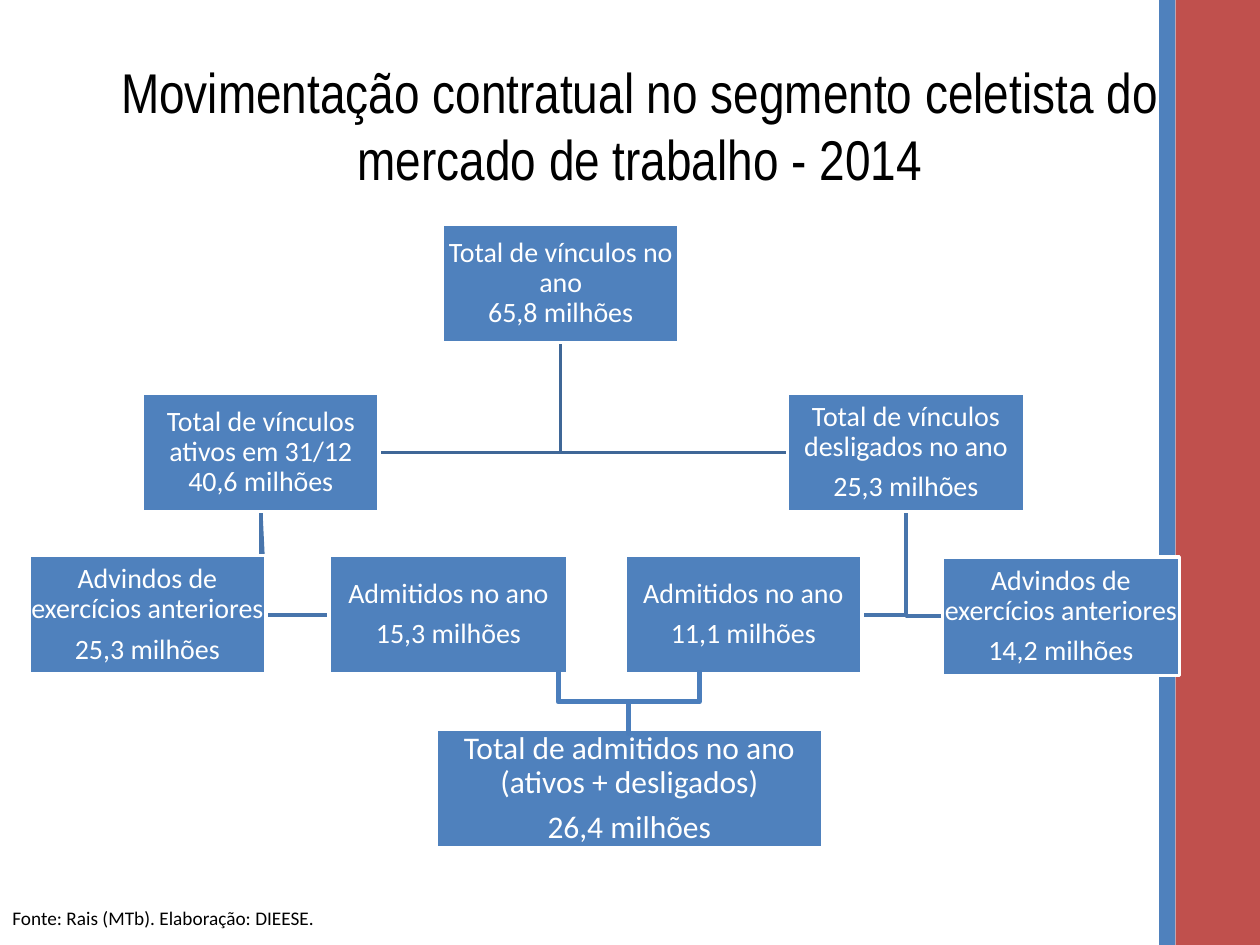
from pptx import Presentation
from pptx.dml.color import RGBColor
from pptx.enum.shapes import MSO_SHAPE as Shape
from pptx.enum.text import MSO_ANCHOR as Anchor, MSO_AUTO_SIZE as AutoSize, PP_ALIGN as Align
from pptx.util import Inches, Pt

BLUE = RGBColor(0x4F, 0x81, 0xBD)
RED = RGBColor(0xC0, 0x50, 0x4D)
WHITE = RGBColor(0xFF, 0xFF, 0xFF)
BLACK = RGBColor(0x00, 0x00, 0x00)
UPPER_LINE = RGBColor(0x3F, 0x67, 0x97)
LOWER_LINE = RGBColor(0x48, 0x75, 0xAC)
BRACE_LINE = RGBColor(0x4B, 0x7E, 0xBC)

BOX_WIDTH, BOX_HEIGHT = 1.88, 0.94

# Left, top, width, text size, paragraphs (a newline is a line break)
BOXES = [
    (3.51, 1.78, BOX_WIDTH, 16, ["Total de vínculos no ano\n65,8 milhões"]),
    (1.13, 3.12, BOX_WIDTH, 16, ["Total de vínculos ativos em 31/12\n40,6 milhões"]),
    (2.61, 4.41, 1.9, 16, ["Admitidos no ano", "15,3 milhões"]),
    (0.23, 4.41, BOX_WIDTH, 16, ["Advindos de exercícios anteriores", "25,3 milhões"]),
    (6.25, 3.12, BOX_WIDTH, 16, ["Total de vínculos desligados no ano", "25,3 milhões"]),
    (4.96, 4.41, BOX_WIDTH, 16, ["Admitidos no ano", "11,1 milhões"]),
    (7.48, 4.42, BOX_WIDTH, 16, ["Advindos de exercícios anteriores", "14,2 milhões"]),
    (3.46, 5.79, 3.07, 18, ["Total de admitidos no ano (ativos + desligados)", "26,4 milhões"]),
]

# Colour and corner points of each branch
BRANCHES = [
    (LOWER_LINE, [(7.19, 4.06), (7.19, 4.89), (7.48, 4.89)]),
    (LOWER_LINE, [(7.19, 4.06), (7.19, 4.88), (6.84, 4.88)]),
    (UPPER_LINE, [(4.45, 2.72), (4.45, 3.59), (6.25, 3.59)]),
    (LOWER_LINE, [(2.07, 4.06), (2.11, 4.88)]),
    (LOWER_LINE, [(2.07, 4.06), (2.07, 4.88), (2.61, 4.88)]),
    (UPPER_LINE, [(4.45, 2.72), (4.45, 3.59), (3.01, 3.59)]),
]


def place(shape, left, top, width, height):
    shape.left, shape.top = Inches(left), Inches(top)
    shape.width, shape.height = Inches(width), Inches(height)


def add_run(para, text, size, font, color):
    run = para.add_run()
    run.text = text
    run.font.size = Pt(size)
    run.font.name = font
    run.font.color.rgb = color


def set_outline(shape, color, width):
    shape.line.color.rgb = color
    shape.line.width = Pt(width)


def add_rectangle(page, left, top, width, height, color):
    box = page.shapes.add_shape(
        Shape.RECTANGLE, Inches(left), Inches(top), Inches(width), Inches(height))
    box.shadow.inherit = False
    box.fill.solid()
    box.fill.fore_color.rgb = color
    box.line.fill.background()
    return box


def add_title(page, text):
    title = page.shapes.title
    place(title, 0.83, 0.44, 8.5, 1.1)
    frame = title.text_frame
    frame.word_wrap = True
    frame.vertical_anchor = Anchor.MIDDLE
    para = frame.paragraphs[0]
    para.alignment = Align.CENTER
    add_run(para, text, 32, "Arial Narrow", BLACK)
    # Bring the title in front of the side bands
    page.shapes.element.append(title.element)


def add_branch(page, color, points):
    start, *corners = [(Inches(x), Inches(y)) for x, y in points]
    builder = page.shapes.build_freeform(*start)
    builder.add_line_segments(corners, close=False)
    branch = builder.convert_to_shape()
    branch.shadow.inherit = False
    branch.fill.background()
    set_outline(branch, color, 2)


def add_box(page, left, top, width, size, texts):
    box = add_rectangle(page, left, top, width, BOX_HEIGHT, BLUE)
    set_outline(box, WHITE, 2)
    frame = box.text_frame
    frame.word_wrap = True
    frame.vertical_anchor = Anchor.MIDDLE
    frame.margin_left = frame.margin_right = Inches(0.01)
    frame.margin_top = frame.margin_bottom = Inches(0.01)
    for index, text in enumerate(texts):
        para = frame.add_paragraph() if index else frame.paragraphs[0]
        para.alignment = Align.CENTER
        para.line_spacing = 0.9
        para.space_after = Pt(size * 0.35)
        for row, line in enumerate(text.split("\n")):
            if row:
                para.add_line_break()
            add_run(para, line, size, "Calibri", WHITE)


def add_source(page, text):
    note = page.shapes.add_textbox(Inches(0), Inches(7.14), Inches(6.3), Inches(0.47))
    frame = note.text_frame
    frame.word_wrap = True
    frame.auto_size = AutoSize.SHAPE_TO_FIT_TEXT
    add_run(frame.paragraphs[0], text, 11, "Calibri", BLACK)


def add_brace(page):
    brace = page.shapes.add_shape(
        Shape.RIGHT_BRACE, Inches(4.74), Inches(5.01), Inches(0.5), Inches(1.12))
    brace.rotation = 90
    brace.adjustments[0] = 0
    brace.adjustments[1] = 0.5
    brace.shadow.inherit = False
    brace.fill.background()
    set_outline(brace, BRACE_LINE, 3)


def main():
    deck = Presentation()
    deck.slide_width, deck.slide_height = Inches(10), Inches(7.5)
    page = deck.slides.add_slide(deck.slide_layouts[5])

    # Side bands and title
    add_rectangle(page, 9.2, 0, 0.13, 7.51, BLUE)
    add_rectangle(page, 9.33, 0, 0.67, 7.51, RED)
    add_title(page, "Movimentação contratual no segmento celetista do mercado de trabalho - 2014")

    # Tree of employment contracts
    for branch in BRANCHES:
        add_branch(page, *branch)
    for box in BOXES:
        add_box(page, *box)

    # Source and the brace that joins both groups of hires
    add_source(page, "Fonte: Rais (MTb). Elaboração: DIEESE.")
    add_brace(page)

    deck.save("out.pptx")


if __name__ == "__main__":
    main()
